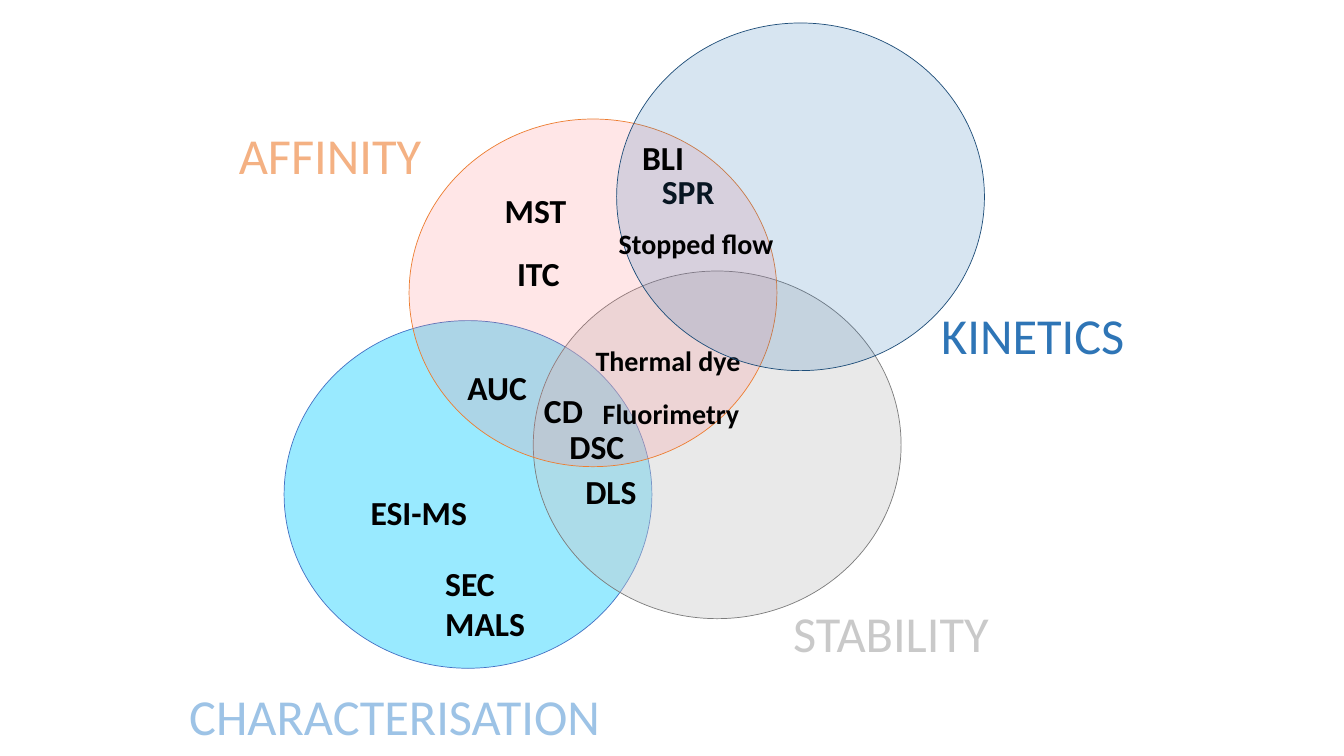
from dataclasses import dataclass

import pptx
import pptx.dml.color
import pptx.enum.shapes
import pptx.enum.text
import pptx.oxml
import pptx.oxml.ns
import pptx.shapes.autoshape
import pptx.shapes.shapetree
import pptx.util
from pptx.util import Cm

COLORS = {
    "text": "000000",
    "cyan": "00CCFF",
    "cyan line": "4472C4",
    "light blue": "9DC3E6",
    "grey": "C9C9C9",
    "grey line": "7C7C7C",
    "pink": "FF7C80",
    "orange": "ED7D31",
    "peach": "F4B183",
    "blue": "2E75B6",
    "navy": "1F4E79",
}
FONT = "Calibri"
CIRCLE_W, CIRCLE_H = 9.27, 8.76
HEIGHTS = {20: 1.12, 24: 1.27, 36: 1.8}  # one-line box height in cm by text size


@dataclass
class Label:
    text: str
    left: float
    top: float
    width: float = 2.62
    size: int = 24
    color: str = "text"
    bold: bool = True
    lines: int = 1


@dataclass
class Property:
    """A circle of the diagram and its heading."""
    left: float
    top: float
    fill: str
    opacity: int
    line: str
    heading: Label


def heading(text: str, left: float, top: float, width: float, color: str) -> Label:
    return Label(text, left, top, width, 36, color, bold=False)


CHARACTERISATION = Property(
    7.16, 8.08, "cyan", 40, "cyan line",
    heading("CHARACTERISATION", 4.52, 17.15, 12.24, "light blue"))
STABILITY = Property(
    13.44, 6.83, "grey", 40, "grey line",
    heading("STABILITY", 19.74, 15.06, 12.24, "grey"))
AFFINITY = Property(
    10.31, 3.0, "pink", 19, "orange",
    heading("AFFINITY", 5.77, 3.0, 5.61, "peach"))
KINETICS = Property(
    15.54, 0.58, "blue", 19, "navy",
    heading("KINETICS", 23.47, 7.54, 9.9, "blue"))

METHODS = [
    Label("AUC", 11.53, 9.12),
    Label("ESI-MS", 9.09, 12.27, 3.33),
    Label("DLS", 14.5, 11.73),
    Label("CD", 13.46, 9.7),
    Label("SPR", 16.43, 4.17),
    Label("ITC", 12.78, 6.25),
    Label("Thermal dye", 14.76, 8.53, 4.37, 20),
    Label("Fluorimetry", 14.94, 9.86, 4.52, 20),
    Label("DSC", 14.1, 10.62),
    Label("MST", 12.47, 4.65),
    Label("SEC MALS", 10.97, 14.05, 3.71, lines=2),
]
METHODS_OVER_KINETICS = [
    Label("Stopped flow", 15.34, 5.59, 4.85, 20),
    Label("BLI", 15.93, 3.33, 1.6),
]


def rgb(name: str) -> pptx.dml.color.RGBColor:
    return pptx.dml.color.RGBColor.from_string(COLORS[name])


def set_opacity(s: pptx.shapes.autoshape.Shape, percent: int) -> None:
    qn = pptx.oxml.ns.qn
    color = s._element.spPr.find(qn("a:solidFill")).find(qn("a:srgbClr"))
    alpha = pptx.oxml.parse_xml(
        f'<a:alpha {pptx.oxml.ns.nsdecls("a")} val="{percent * 1000}"/>')
    color.append(alpha)


def draw_label(shapes: pptx.shapes.shapetree._BaseGroupShapes, label: Label) -> None:
    height = HEIGHTS[label.size] * label.lines
    s = shapes.add_textbox(Cm(label.left), Cm(label.top), Cm(label.width), Cm(height))
    tf = s.text_frame
    tf.word_wrap = True
    tf.auto_size = pptx.enum.text.MSO_AUTO_SIZE.SHAPE_TO_FIT_TEXT
    r = tf.paragraphs[0].add_run()
    r.text = label.text
    r.font.name = FONT
    r.font.size = pptx.util.Pt(label.size)
    r.font.bold = label.bold
    r.font.color.rgb = rgb(label.color)


def draw_property(shapes: pptx.shapes.shapetree.SlideShapes, prop: Property) -> None:
    """Draw the circle and its heading as one group."""
    group = shapes.add_group_shape()
    s = group.shapes.add_shape(
        pptx.enum.shapes.MSO_SHAPE.OVAL,
        Cm(prop.left), Cm(prop.top), Cm(CIRCLE_W), Cm(CIRCLE_H))
    s.shadow.inherit = False
    s.fill.solid()
    s.fill.fore_color.rgb = rgb(prop.fill)
    set_opacity(s, prop.opacity)
    s.line.color.rgb = rgb(prop.line)
    s.line.width = pptx.util.Pt(0.5)
    draw_label(group.shapes, prop.heading)


def main() -> None:
    prs = pptx.Presentation()
    prs.slide_width, prs.slide_height = Cm(33.87), Cm(19.05)
    shapes = prs.slides.add_slide(prs.slide_layouts[6]).shapes
    for prop in (CHARACTERISATION, STABILITY, AFFINITY):
        draw_property(shapes, prop)
    for method in METHODS:
        draw_label(shapes, method)
    draw_property(shapes, KINETICS)
    for method in METHODS_OVER_KINETICS:
        draw_label(shapes, method)
    prs.save("out.pptx")


if __name__ == "__main__":
    main()
